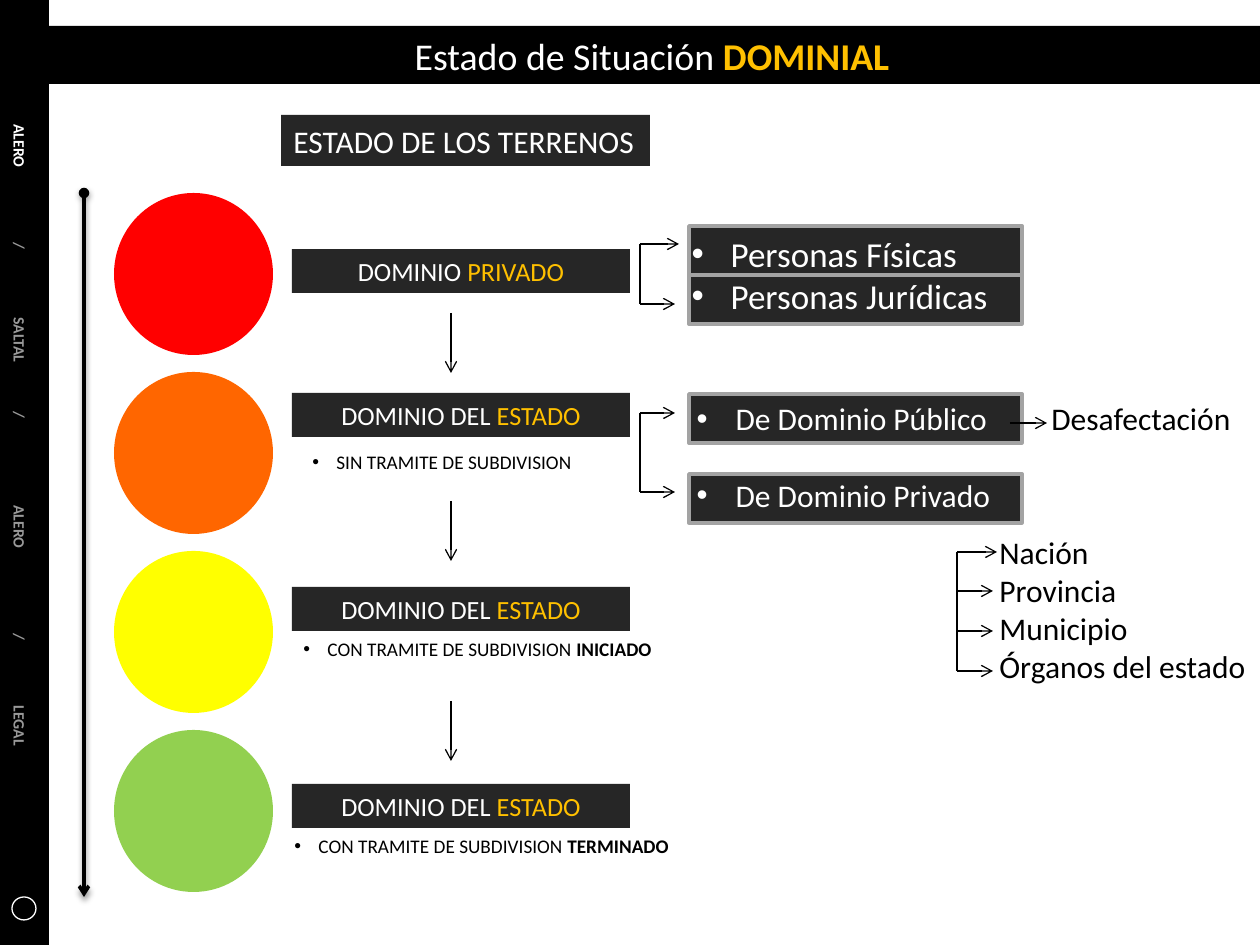
from lxml.etree import SubElement
from pptx import Presentation
from pptx.dml.color import RGBColor
from pptx.enum.shapes import MSO_CONNECTOR, MSO_SHAPE
from pptx.enum.text import MSO_ANCHOR, MSO_AUTO_SIZE, PP_ALIGN
from pptx.oxml.ns import qn
from pptx.util import Inches, Pt

PX = Inches(1) / 126
C = {"black": "000000", "white": "FFFFFF", "dark": "262626", "edge": "A3A3A3",
     "gold": "FFC000", "muted": "999999", "red": "FF0000", "orange": "FF6600",
     "yellow": "FFFF00", "green": "92D050"}


def write(p, size, *runs):
    """Add (text, colour, bold) runs to a paragraph."""
    for text, color, bold in runs:
        r = p.add_run()
        r.text = text
        r.font.name = "Calibri"
        r.font.size = Pt(size)
        r.font.bold = bold
        r.font.color.rgb = RGBColor.from_string(C[color])


def line(x1, y1, x2, y2, width=0.75, head=None, tail=None):
    """Draw a black line and return its effect list."""
    ends = [round(v * PX) for v in (x1, y1, x2, y2)]
    cn = s.shapes.add_connector(MSO_CONNECTOR.STRAIGHT, *ends)
    cn.line.color.rgb = RGBColor.from_string(C["black"])
    cn.line.width = Pt(width)
    ln = cn.line._get_or_add_ln()
    for tag, kind in (("a:headEnd", head), ("a:tailEnd", tail)):
        if kind:
            SubElement(ln, qn(tag), type=kind)
    return SubElement(cn._element.spPr, qn("a:effectLst"))


prs = Presentation()
prs.slide_width, prs.slide_height = Inches(10), Inches(7.5)
s = prs.slides.add_slide(prs.slide_layouts[3])
title, people, domains = s.placeholders

# Title band
title.left, title.top, title.width, title.height = [round(v * PX) for v in (44, 26, 1216, 58)]
title.fill.solid()
title.fill.fore_color.rgb = RGBColor.from_string(C["black"])
tf = title.text_frame
tf.auto_size = MSO_AUTO_SIZE.NONE
tf.vertical_anchor = MSO_ANCHOR.MIDDLE
p = tf.paragraphs[0]
p.alignment = PP_ALIGN.CENTER
write(p, 21.6, ("Estado de Situación ", "white", False), ("DOMINIAL", "gold", True))

# Plain shapes: kind, left, top, width, height, fill, outline, outline width
RECT, OVAL = MSO_SHAPE.RECTANGLE, MSO_SHAPE.OVAL
shapes = [(RECT, 689, y, 333, 49, "dark", "edge", 2) for y in (394, 474, 275, 226)]
shapes += [(OVAL, 114, 193 + 179 * i, 159, 162, color, None, 0)
           for i, color in enumerate(("red", "orange", "yellow", "green"))]
shapes += [(RECT, 0, 0, 49, 945, "black", None, 0),
           (OVAL, 12, 897, 24, 23, None, "white", 0.75)]
for kind, x, y, w, h, fill, edge, width in shapes:
    sp = s.shapes.add_shape(kind, *[round(v * PX) for v in (x, y, w, h)])
    sp.shadow.inherit = False
    if fill:
        sp.fill.solid()
        sp.fill.fore_color.rgb = RGBColor.from_string(C[fill])
    else:
        sp.fill.background()
    if edge:
        sp.line.color.rgb = RGBColor.from_string(C[edge])
        sp.line.width = Pt(width)
    else:
        sp.line.fill.background()

# Dark labels: left, top, width, height, size, alignment, runs
labels = [(281, 115, 369, 51, 18, PP_ALIGN.LEFT, [("ESTADO DE LOS TERRENOS", "white", False)])]
for y, first, second in ((249, "DOMINIO ", "PRIVADO"), (393, "DOMINIO DEL ", "ESTADO"),
                         (587, "DOMINIO DEL ", "ESTADO"), (784, "DOMINIO DEL ", "ESTADO")):
    labels.append((292, y, 338, 44, 15, PP_ALIGN.CENTER,
                   [(first, "white", False), (second, "gold", False)]))
for x, y, w, h, size, align, runs in labels:
    sp = s.shapes.add_shape(RECT, *[round(v * PX) for v in (x, y, w, h)])
    sp.shadow.inherit = False
    sp.fill.solid()
    sp.fill.fore_color.rgb = RGBColor.from_string(C["dark"])
    sp.line.fill.background()
    sp.text_frame.vertical_anchor = MSO_ANCHOR.MIDDLE
    p = sp.text_frame.paragraphs[0]
    p.alignment = align
    write(p, size, *runs)

# Bulleted lists, brought in front of their frames
lists = [(people, (679, 226, 338, 97), 20, 0, ("Personas Físicas", "Personas Jurídicas")),
         (domains, (684, 393, 338, 130), 18, 22, ("De Dominio Público", "De Dominio Privado"))]
for sp, place, size, gap, items in lists:
    sp.left, sp.top, sp.width, sp.height = [round(v * PX) for v in place]
    s.shapes._spTree.append(sp._element)
    tf = sp.text_frame
    tf.auto_size = MSO_AUTO_SIZE.NONE
    for i, item in enumerate(items):
        p = tf.add_paragraph() if i else tf.paragraphs[0]
        p.space_before = Pt(gap if i else 0)
        pPr = p._p.get_or_add_pPr()
        pPr.set("marL", str(round(39 * PX)))
        pPr.set("indent", str(round(-39 * PX)))
        write(p, size, (item, "white", False))

# Free text: left, top, width, height, size, bulleted, paragraphs
texts = [(300, 444, 300, 37, 11, True, [[("SIN TRAMITE DE SUBDIVISION", "black", False)]])]
for x, y, word in ((291, 631, "INICIADO"), (282, 828, "TERMINADO")):
    texts.append((x, y, 420, 37, 11, True,
                  [[("CON TRAMITE DE SUBDIVISION ", "black", False), (word, "black", True)]]))
texts.append((1039, 393, 215, 50, 18, False, [[("Desafectación", "black", False)]]))
texts.append((987, 527, 273, 165, 18, False, [
    [(word, "black", False)] for word in ("Nación", "Provincia", "Municipio", "Órganos del estado")]))
for x, y, w, h, size, bulleted, paragraphs in texts:
    tf = s.shapes.add_textbox(*[round(v * PX) for v in (x, y, w, h)]).text_frame
    tf.word_wrap = True
    for i, runs in enumerate(paragraphs):
        p = tf.add_paragraph() if i else tf.paragraphs[0]
        if bulleted:
            pPr = p._p.get_or_add_pPr()
            pPr.set("marL", str(round(24 * PX)))
            pPr.set("indent", str(round(-24 * PX)))
            SubElement(pPr, qn("a:buFont"), typeface="Arial")
            SubElement(pPr, qn("a:buChar"), char="•")
        write(p, size, *runs)

# Sidebar words, turned to read downwards: centre, word, colour
for y, word, color in ((146, "ALERO", "white"), (246, "/", "muted"), (340, "SALTAL", "muted"),
                       (415, "/", "muted"), (527, "ALERO", "muted"), (637, "/", "muted"),
                       (726, "LEGAL", "muted")):
    sp = s.shapes.add_textbox(*[round(v * PX) for v in (-30, y - 16, 100, 32)])
    sp.rotation = 90
    tf = sp.text_frame
    tf.word_wrap = True
    tf.vertical_anchor = MSO_ANCHOR.MIDDLE
    p = tf.paragraphs[0]
    p.alignment = PP_ALIGN.CENTER
    write(p, 9, (word, color, True))

# Timeline with a soft shadow
effects = line(84, 193, 84, 897, 2, "oval", "arrow")
shadow = SubElement(effects, qn("a:outerShdw"), blurRad=str(Pt(3.1)), dist=str(Pt(1.6)),
                    dir="5400000", rotWithShape="0")
color = SubElement(shadow, qn("a:srgbClr"), val=C["black"])
SubElement(color, qn("a:alpha"), val="38000")

# Steps between the labels
for y in (313, 501, 701):
    line(451, y, 451, y + 60, tail="arrow")

# Brackets: stem position, then the (tip, height) of each branch
for x, branches in ((640, ((679, 244), (675, 304))), (640, ((675, 413), (675, 492))),
                    (957, ((997, 552), (993, 591), (993, 631), (993, 671)))):
    line(x, branches[0][1], x, branches[-1][1])
    for tip, y in branches:
        line(x, y, tip, y, tail="arrow")
line(1010, 423, 1047, 423, tail="arrow")

prs.save("out.pptx")
